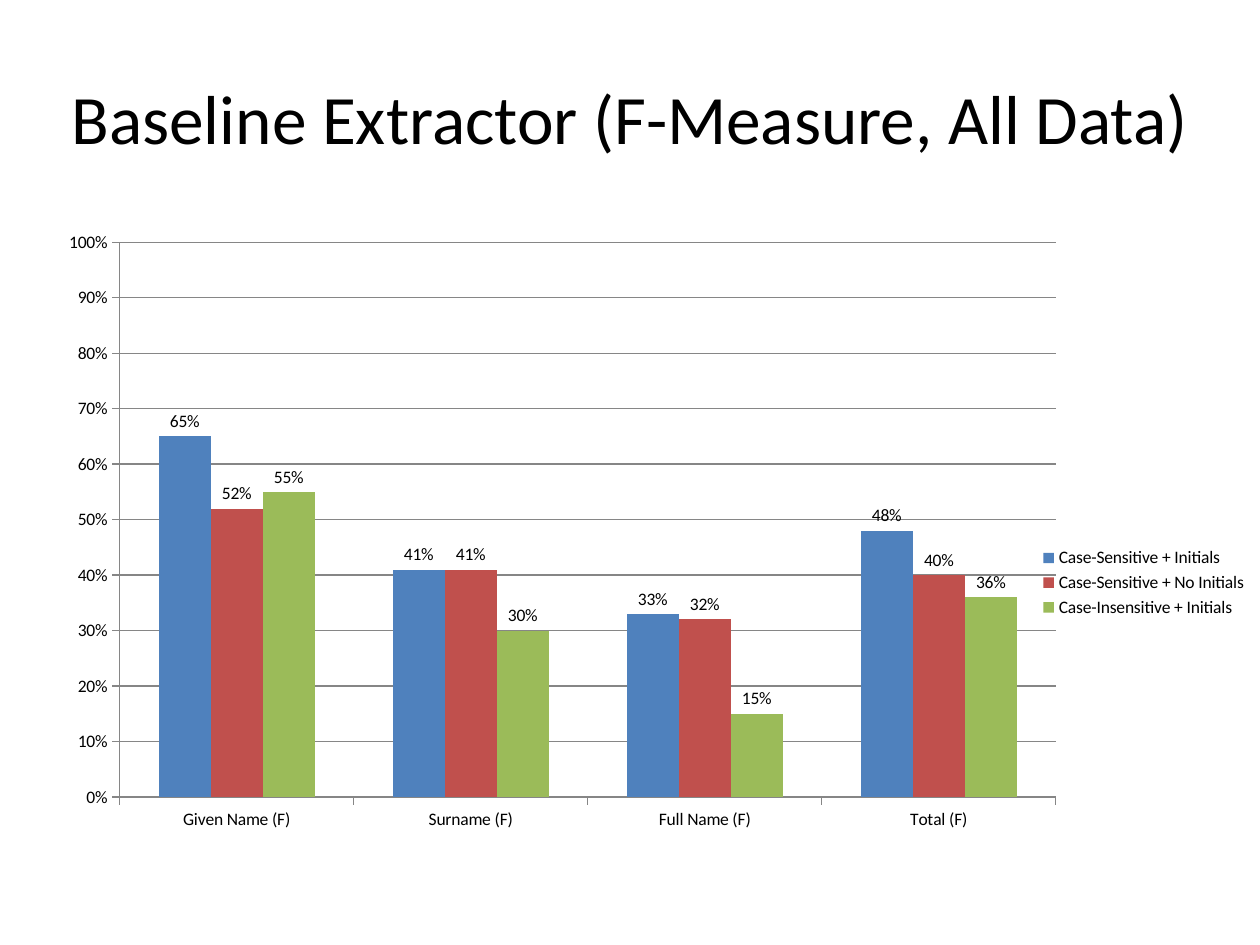
"""Build a slide with a clustered column chart of baseline extractor F-measures."""
import lxml.etree
import pptx
import pptx.chart.data
import pptx.dml.color
import pptx.enum.chart
import pptx.enum.text
import pptx.oxml
import pptx.oxml.ns
import pptx.util

Pt = pptx.util.Pt
RGBColor = pptx.dml.color.RGBColor
BLACK = RGBColor(0x00, 0x00, 0x00)
GRAY = RGBColor(0x86, 0x86, 0x86)
BLUE = RGBColor(0x4F, 0x81, 0xBD)
RED = RGBColor(0xC0, 0x50, 0x4D)
GREEN = RGBColor(0x9B, 0xBB, 0x59)

TITLE = "Baseline Extractor (F-Measure, All Data)"
CATEGORIES = ["Given Name (F)", "Surname (F)", "Full Name (F)", "Total (F)"]
SERIES = [
    ("Case-Sensitive + Initials", BLUE, [0.65, 0.41, 0.33, 0.48]),
    ("Case-Sensitive + No Initials", RED, [0.52, 0.41, 0.32, 0.40]),
    ("Case-Insensitive + Initials", GREEN, [0.55, 0.30, 0.15, 0.36]),
]
PERCENT = "0%"
TITLE_BOX = (30, 21.6, 660, 90)
CHART_BOX = (0, 126, 720, 414)
PLOT_AREA = {"x": 0.095, "y": 0.03, "w": 0.743, "h": 0.766}
TITLE_FONT = {"name": "Calibri", "size": Pt(39.6)}
CHART_FONT = {"name": "Calibri", "size": Pt(10)}


def apply(target, values):
    for name, value in values.items():
        setattr(target, name, value)


def format_font(font, values):
    apply(font, values)
    font.color.rgb = BLACK


def add_title(page):
    box = page.shapes.add_textbox(*map(Pt, TITLE_BOX))
    apply(box.text_frame, {
        "word_wrap": True,
        "vertical_anchor": pptx.enum.text.MSO_ANCHOR.MIDDLE,
    })
    para = box.text_frame.paragraphs[0]
    para.alignment = pptx.enum.text.PP_ALIGN.CENTER
    span = para.add_run()
    span.text = TITLE
    format_font(span.font, TITLE_FONT)


def place_plot(chart):
    qn = pptx.oxml.ns.qn
    area = chart.element.find(".//" + qn("c:plotArea"))
    for layout in area.findall(qn("c:layout")):
        area.remove(layout)
    layout = pptx.oxml.parse_xml(f"<c:layout {pptx.oxml.ns.nsdecls('c')}/>")
    area.insert(0, layout)
    manual = lxml.etree.SubElement(layout, qn("c:manualLayout"))
    settings = {"layoutTarget": "inner", "xMode": "edge", "yMode": "edge", **PLOT_AREA}
    for name, value in settings.items():
        lxml.etree.SubElement(manual, qn(f"c:{name}")).set("val", str(value))


def add_chart(page):
    enums = pptx.enum.chart
    data = pptx.chart.data.CategoryChartData(number_format=PERCENT)
    data.categories = CATEGORIES
    for name, color, values in SERIES:
        data.add_series(name, values)
    chart = page.shapes.add_chart(
        enums.XL_CHART_TYPE.COLUMN_CLUSTERED, *map(Pt, CHART_BOX), data
    ).chart
    apply(chart, {"has_title": False, "has_legend": True})
    format_font(chart.font, CHART_FONT)
    apply(chart.legend, {
        "position": enums.XL_LEGEND_POSITION.RIGHT,
        "include_in_layout": False,
    })

    plot = chart.plots[0]
    apply(plot, {"gap_width": 150, "overlap": 0, "vary_by_categories": False})
    for series, (name, color, values) in zip(plot.series, SERIES):
        series.format.fill.solid()
        series.format.fill.fore_color.rgb = color
        apply(series.data_labels, {
            "show_value": True,
            "number_format": PERCENT,
            "number_format_is_linked": False,
            "position": enums.XL_LABEL_POSITION.OUTSIDE_END,
        })
        format_font(series.data_labels.font, CHART_FONT)

    scale = chart.value_axis
    apply(scale, {
        "minimum_scale": 0,
        "maximum_scale": 1,
        "major_unit": 0.1,
        "has_major_gridlines": True,
    })
    apply(scale.tick_labels, {"number_format": PERCENT, "number_format_is_linked": False})
    for axis in (chart.category_axis, scale):
        axis.major_tick_mark = enums.XL_TICK_MARK.OUTSIDE
        axis.minor_tick_mark = enums.XL_TICK_MARK.NONE
    for part in (chart.category_axis, scale, scale.major_gridlines):
        part.format.line.color.rgb = GRAY
        part.format.line.width = Pt(0.75)
    place_plot(chart)


def main():
    deck = pptx.Presentation()
    apply(deck, {"slide_width": Pt(720), "slide_height": Pt(540)})
    page = deck.slides.add_slide(deck.slide_layouts[6])
    add_title(page)
    add_chart(page)
    deck.save("out.pptx")


if __name__ == "__main__":
    main()
